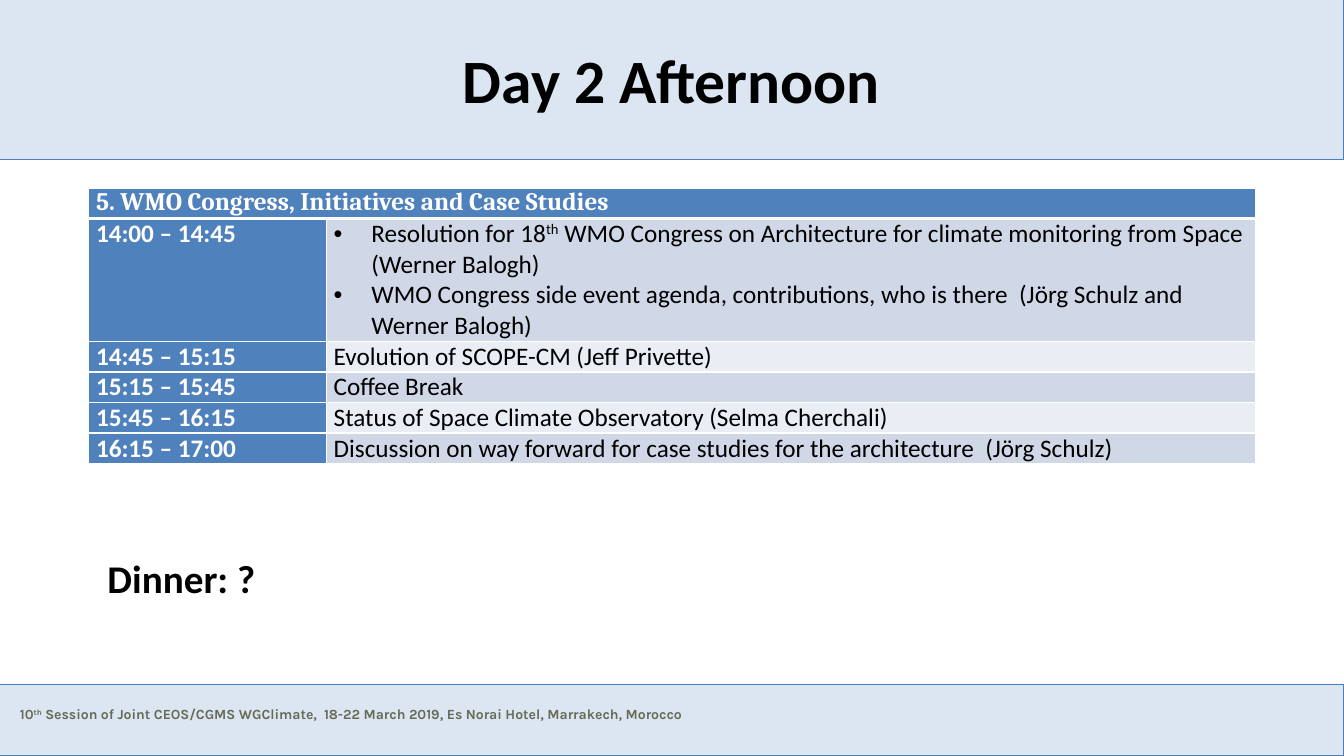
from lxml import etree
from pptx import Presentation
from pptx import util as u
from pptx.dml.color import RGBColor
from pptx.enum import shapes, text
from pptx.oxml import ns

BLACK, WHITE = "000000", "FFFFFF"
BAND_FILL, BAND_LINE = "DCE6F2", "4B7EBC"
TIME_FILL, ROW_FILLS = "4F81BD", ("D0D8E8", "E9EDF4")
FOOTER_COLOR = "676A55"
WIDTH, HEIGHT = 33.87, 19.05

SESSION = "5. WMO Congress, Initiatives and Case Studies"
AGENDA = [
    ("14:00 – 14:45", [
        "Resolution for 18^th^ WMO Congress on Architecture for climate "
        "monitoring from Space (Werner Balogh)",
        "WMO Congress side event agenda, contributions, who is there  "
        "(Jörg Schulz and Werner Balogh)"]),
    ("14:45 – 15:15", ["Evolution of SCOPE-CM (Jeff Privette)"]),
    ("15:15 – 15:45", ["Coffee Break"]),
    ("15:45 – 16:15", ["Status of Space Climate Observatory (Selma Cherchali)"]),
    ("16:15 – 17:00", ["Discussion on way forward for case studies for the "
                       "architecture  (Jörg Schulz)"]),
]


def rgb(value):
    return RGBColor.from_string(value)


class AgendaSlide:
    def __init__(self, slide):
        self.shapes = slide.shapes

    def add_runs(self, paragraph, content, size, color, bold=True, font="Calibri"):
        """Add runs; a part between two carets is superscript."""
        for index, part in enumerate(content.split("^")):
            run = paragraph.add_run()
            run.text = part
            run.font.size = u.Pt(size)
            run.font.name = font
            run.font.bold = bold
            run.font.color.rgb = rgb(color)
            if index % 2:
                run._r.get_or_add_rPr().set("baseline", "30000")

    def band(self, top, height):
        band = self.shapes.add_shape(shapes.MSO_SHAPE.RECTANGLE, 0, u.Cm(top),
                                     u.Cm(WIDTH), u.Cm(height))
        band.shadow.inherit = False
        band.fill.solid()
        band.fill.fore_color.rgb = rgb(BAND_FILL)
        band.line.color.rgb = rgb(BAND_LINE)
        band.line.width = u.Pt(0.75)

    def label(self, box, content, size, color=BLACK, font="Calibri",
              align=text.PP_ALIGN.LEFT, anchor=text.MSO_ANCHOR.TOP, wrap=True):
        frame = self.shapes.add_textbox(*map(u.Cm, box)).text_frame
        frame.word_wrap = wrap
        frame.vertical_anchor = anchor
        frame.paragraphs[0].alignment = align
        self.add_runs(frame.paragraphs[0], content, size, color, font=font)

    def bullet(self, paragraph):
        properties = paragraph._p.get_or_add_pPr()
        indent = u.Cm(0.95)
        properties.set("marL", str(indent))
        properties.set("indent", str(-indent))
        etree.SubElement(properties, ns.qn("a:buFont")).set("typeface", "Arial")
        etree.SubElement(properties, ns.qn("a:buChar")).set("char", "•")

    def border(self, cell, top, bottom):
        """Draw white cell edges; top and bottom widths are in points."""
        properties = cell._tc.get_or_add_tcPr()
        for index, (side, width) in enumerate(
                (("L", 1), ("R", 1), ("T", top), ("B", bottom))):
            edge = etree.Element(ns.qn(f"a:ln{side}"), w=str(u.Pt(width)))
            fill = etree.SubElement(edge, ns.qn("a:solidFill"))
            etree.SubElement(fill, ns.qn("a:srgbClr")).set("val", WHITE)
            properties.insert(index, edge)

    def cell(self, cell, entries, fill, color, bold=True, font="Calibri",
             top=1, bottom=1):
        cell.margin_left = cell.margin_right = u.Cm(0.18)
        cell.margin_top = cell.margin_bottom = 0
        cell.fill.solid()
        cell.fill.fore_color.rgb = rgb(fill)
        self.border(cell, top, bottom)
        frame = cell.text_frame
        for index, entry in enumerate(entries):
            paragraph = frame.add_paragraph() if index else frame.paragraphs[0]
            if len(entries) > 1:
                self.bullet(paragraph)
            self.add_runs(paragraph, entry, 18, color, bold, font)

    def agenda(self, left, top, column_widths, row_heights):
        table = self.shapes.add_table(
            len(row_heights), len(column_widths), u.Cm(left), u.Cm(top),
            u.Cm(sum(column_widths)), u.Cm(sum(row_heights))).table
        for column, width in zip(table.columns, column_widths):
            column.width = u.Cm(width)
        for row, height in zip(table.rows, row_heights):
            row.height = u.Cm(height)

        table.cell(0, 0).merge(table.cell(0, 1))
        self.cell(table.cell(0, 0), [SESSION], TIME_FILL, WHITE,
                  font="Cambria", bottom=3)
        self.cell(table.cell(0, 1), [], TIME_FILL, WHITE, bottom=3)
        for row, (time, topics) in enumerate(AGENDA, start=1):
            above = 3 if row == 1 else 1
            self.cell(table.cell(row, 0), [time], TIME_FILL, WHITE, top=above)
            self.cell(table.cell(row, 1), topics, ROW_FILLS[(row - 1) % 2],
                      BLACK, bold=False, top=above)


def main():
    presentation = Presentation()
    presentation.slide_width, presentation.slide_height = u.Cm(WIDTH), u.Cm(HEIGHT)
    page = AgendaSlide(presentation.slides.add_slide(presentation.slide_layouts[6]))

    page.band(17.25, 1.8)
    page.band(0, 4.02)
    page.label((0.25, 17.65, 27.03, 0.69),
               "10^th^ Session of Joint CEOS/CGMS WGClimate,  18-22 March 2019, "
               "Es Norai Hotel, Marrakech, Morocco",
               10, FOOTER_COLOR, "Karla")
    page.label((5.36, 0.4, 23.14, 3.18), "Day 2 Afternoon", 44,
               align=text.PP_ALIGN.CENTER, anchor=text.MSO_ANCHOR.MIDDLE)
    page.agenda(2.24, 4.74, (5.99, 23.42), (0.74, 3.1) + (0.77,) * 4)
    page.label((2.46, 13.84, 4.29, 1.45), "Dinner: ?", 28, wrap=False)
    presentation.save("out.pptx")


if __name__ == "__main__":
    main()
